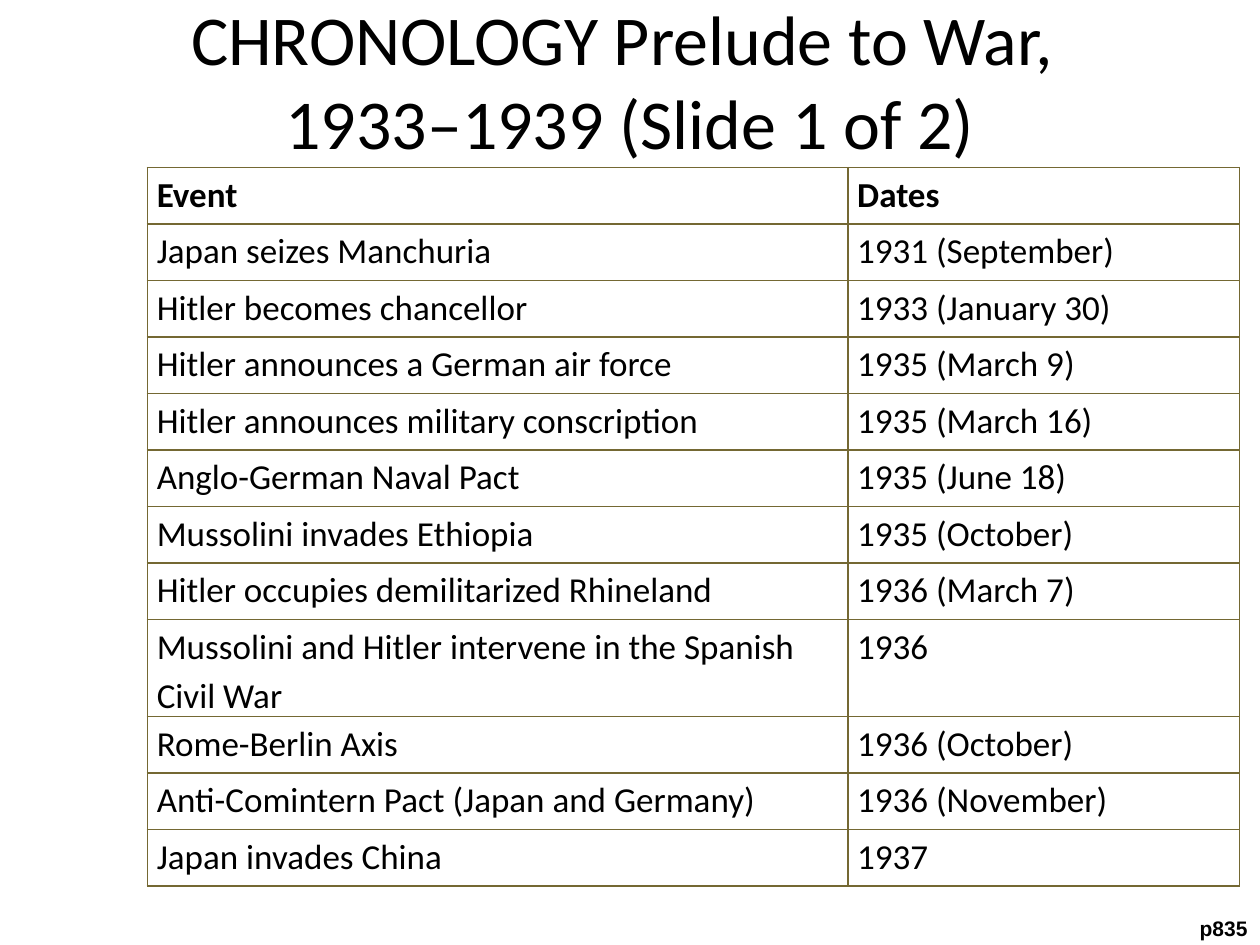
from lxml import etree
from pptx import Presentation
from pptx import util as u
from pptx.dml.color import RGBColor
from pptx.enum import text
from pptx.oxml import ns

HUES = {"ink": "000000", "rule": "746833", "page": "FFFFFF"}

EVENTS = [
    ("Event", "Dates"),
    ("Japan seizes Manchuria", "1931 (September)"),
    ("Hitler becomes chancellor", "1933 (January 30)"),
    ("Hitler announces a German air force", "1935 (March 9)"),
    ("Hitler announces military conscription", "1935 (March 16)"),
    ("Anglo-German Naval Pact", "1935 (June 18)"),
    ("Mussolini invades Ethiopia", "1935 (October)"),
    ("Hitler occupies demilitarized Rhineland", "1936 (March 7)"),
    ("Mussolini and Hitler intervene in the Spanish Civil War", "1936"),
    ("Rome-Berlin Axis", "1936 (October)"),
    ("Anti-Comintern Pact (Japan and Germany)", "1936 (November)"),
    ("Japan invades China", "1937"),
]
COLS = (14.12, 7.9)
ROW = 1.14


def apply(item, **form):
    for key, val in form.items():
        setattr(item, key, val)


def style(para, name, size, bold=False):
    apply(para.font, name=name, size=u.Pt(size), bold=bold)
    para.font.color.rgb = RGBColor.from_string(HUES["ink"])


def add_text(slide, words, area, align, font, **frame):
    box = slide.shapes.add_textbox(*(u.Cm(n) for n in area))
    apply(box.text_frame, **frame)
    para = box.text_frame.paragraphs[0]
    para.text = words
    para.alignment = align
    style(para, *font)


def add_rules(cell):
    """Draw a one-point line on all four sides of a cell."""
    props = cell._tc.get_or_add_tcPr()
    for spot, side in enumerate(("lnL", "lnR", "lnT", "lnB")):
        line = etree.Element(ns.qn("a:" + side), w=str(u.Pt(1)))
        fill = etree.SubElement(line, ns.qn("a:solidFill"))
        etree.SubElement(fill, ns.qn("a:srgbClr"), val=HUES["rule"])
        props.insert(spot, line)


def fill_cell(cell, words, bold):
    side = u.Cm(0.19)
    apply(cell, text=words, margin_left=side, margin_right=side,
          margin_top=0, margin_bottom=0)
    para = cell.text_frame.paragraphs[0]
    para.line_spacing = 1.15
    style(para, "Calibri", 20, bold)
    cell.fill.background()
    add_rules(cell)


def add_grid(slide, left, top):
    frame = slide.shapes.add_table(
        len(EVENTS), len(COLS), u.Cm(left), u.Cm(top),
        u.Cm(sum(COLS)), u.Cm(ROW * len(EVENTS)))
    grid = frame.table
    apply(grid, first_row=False, horz_banding=False)
    for col, width in zip(grid.columns, COLS):
        col.width = u.Cm(width)
    for r, event in enumerate(EVENTS):
        grid.rows[r].height = u.Cm(ROW)
        for c, words in enumerate(event):
            fill_cell(grid.cell(r, c), words, bold=r == 0)


def main():
    deck = Presentation()
    apply(deck, slide_width=u.Cm(25.4), slide_height=u.Cm(19.05))
    slide = deck.slides.add_slide(deck.slide_layouts[6])
    back = slide.background.fill
    back.solid()
    back.fore_color.rgb = RGBColor.from_string(HUES["page"])

    # Title
    add_text(slide, "CHRONOLOGY Prelude to War, \v1933–1939 (Slide 1 of 2)",
             (0, 1.07, 25.4, 1.07), text.PP_ALIGN.CENTER, ("Calibri", 40),
             word_wrap=True, vertical_anchor=text.MSO_ANCHOR.MIDDLE)

    # Page reference
    add_text(slide, " p835", (23.8, 18.34, 1.6, 0.76), text.PP_ALIGN.RIGHT,
             ("Arial", 12, True), word_wrap=False,
             auto_size=text.MSO_AUTO_SIZE.SHAPE_TO_FIT_TEXT)

    # Table of events
    add_grid(slide, 2.97, 3.38)

    deck.save("out.pptx")


if __name__ == "__main__":
    main()
